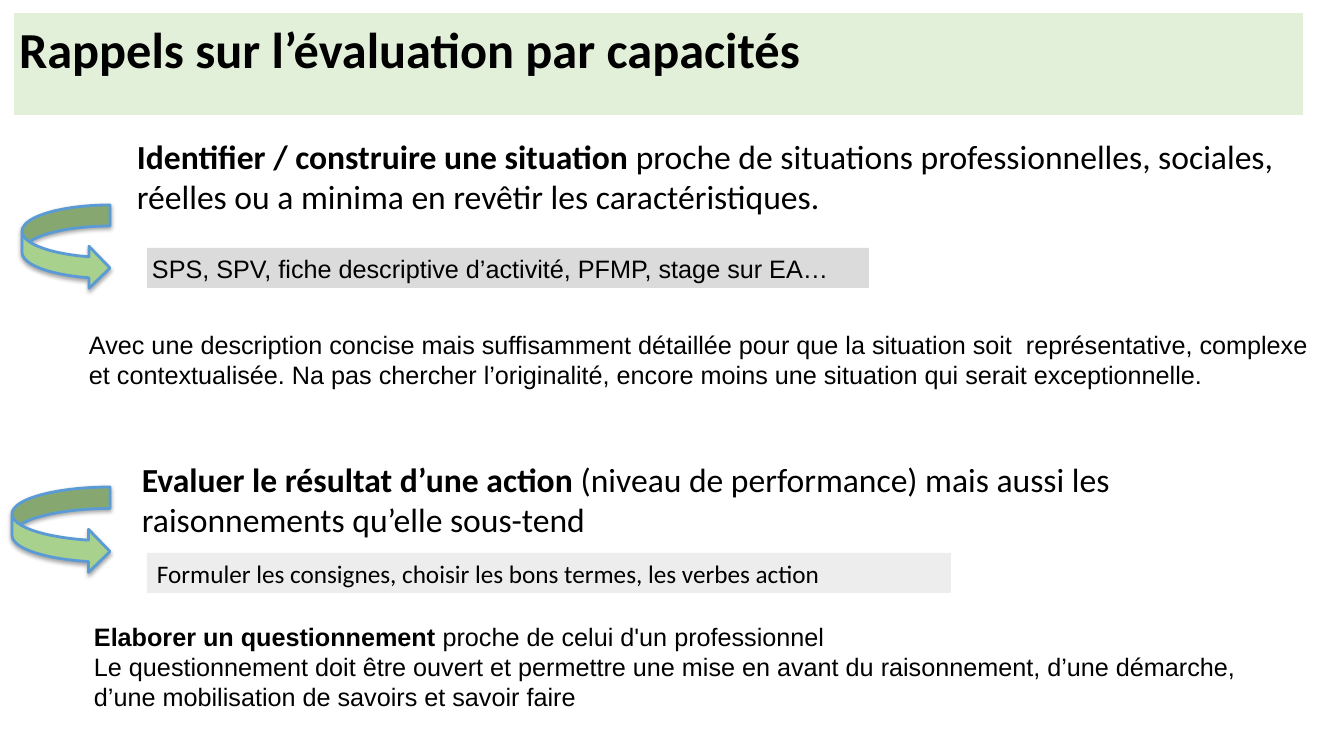
from lxml import etree
from pptx import Presentation
from pptx import util as u
from pptx.dml.color import RGBColor
from pptx.enum import shapes, text
from pptx.oxml import ns

PX = 914400 / 100.8

BLACK = RGBColor(0x00, 0x00, 0x00)
MINT = RGBColor(0xE2, 0xF0, 0xD9)
GREEN = RGBColor(0xA9, 0xD1, 0x8E)
BLUE = RGBColor(0x5B, 0x9B, 0xD5)
GREY = RGBColor(0xDB, 0xDB, 0xDB)
PALE = RGBColor(0xED, 0xED, 0xED)


def emu(*vals):
    return [u.Emu(round(v * PX)) for v in vals]


def write(shape, paras, size, font, inset):
    """Fill a shape; each paragraph is a list of (words, bold) pairs."""
    frame = shape.text_frame
    frame.word_wrap = True
    frame.auto_size = text.MSO_AUTO_SIZE.NONE
    frame.vertical_anchor = text.MSO_ANCHOR.TOP
    frame.margin_left, frame.margin_right = emu(inset, inset)
    frame.margin_top, frame.margin_bottom = emu(5, 5)
    for i, parts in enumerate(paras):
        para = frame.add_paragraph() if i else frame.paragraphs[0]
        para.alignment = text.PP_ALIGN.LEFT
        for words, bold in parts:
            run = para.add_run()
            run.text = words
            run.font.size = u.Pt(size)
            run.font.name = font
            run.font.bold = bold
            run.font.color.rgb = BLACK


def paint(shape, fill):
    shape.fill.solid()
    shape.fill.fore_color.rgb = fill


def title(slide, box, words):
    head = slide.shapes.title
    head.left, head.top, head.width, head.height = emu(*box)
    paint(head, MINT)
    write(head, [[(words, True)]], 36, "Calibri", 5)


def note(slide, box, paras, size, font, inset):
    write(slide.shapes.add_textbox(*emu(*box)), paras, size, font, inset)


def band(slide, box, words, fill, font, inset):
    bar = slide.shapes.add_shape(shapes.MSO_SHAPE.RECTANGLE, *emu(*box))
    bar.shadow.inherit = False
    paint(bar, fill)
    bar.line.fill.background()
    write(bar, [[(words, False)]], 18, font, inset)


def arrow(slide, box):
    bend = slide.shapes.add_shape(shapes.MSO_SHAPE.CURVED_RIGHT_ARROW, *emu(*box))
    paint(bend, GREEN)
    bend.line.color.rgb = BLUE
    bend.line.width = u.Pt(2)
    # Soft shadow straight below
    bend.shadow.inherit = False
    effects = bend.element.spPr.find(ns.qn("a:effectLst"))
    shade = etree.SubElement(effects, ns.qn("a:outerShdw"), blurRad=str(u.Pt(3)),
                             dist=str(u.Pt(1.8)), dir="5400000", rotWithShape="0")
    tone = etree.SubElement(shade, ns.qn("a:srgbClr"), val=str(BLACK))
    etree.SubElement(tone, ns.qn("a:alpha"), val="35000")


def situation(slide, box):
    x, y, w, h = box
    note(slide, (x + 118, y, 1170, 92), [[
        ("Identifier / construire une situation", True),
        (" proche de situations professionnelles, sociales, réelles ou a minima "
         "en revêtir les caractéristiques.", False)]], 24, "Calibri", 5)
    arrow(slide, (x + 8, y + 74, 88, 84))
    band(slide, (x + 133, y + 117, 722, 40),
         "SPS, SPV, fiche descriptive d’activité, PFMP, stage sur EA…",
         GREY, "Arial", 5)
    note(slide, (x + 70, y + 193, w - 70, 72), [[
        ("Avec une description concise mais suffisamment détaillée pour que la "
         "situation soit  représentative, complexe et contextualisée. Na pas "
         "chercher l’originalité, encore moins une situation qui serait "
         "exceptionnelle.", False)]], 18, "Arial", 5)


def result(slide, box):
    x, y, w, h = box
    note(slide, (x + 118, y, 1170, 92), [[
        ("Evaluer le résultat d’une action ", True),
        ("(niveau de performance) mais aussi les raisonnements qu’elle "
         "sous-tend", False)]], 24, "Calibri", 10)
    arrow(slide, (x - 2, y + 33, 98, 86))
    band(slide, (x + 133, y + 99, 804, 40),
         "Formuler les consignes, choisir les bons termes, les verbes action",
         PALE, "Calibri", 10)
    note(slide, (x + 70, y + 162, w - 93, 102), [
        [("Elaborer un questionnement ", True),
         ("proche de celui d'un professionnel", False)],
        [("Le questionnement doit être ouvert et permettre une mise en avant du "
          "raisonnement, d’une démarche, d’une mobilisation de savoirs et "
          "savoir faire", False)]], 18, "Arial", 10)


def main():
    deck = Presentation()
    deck.slide_width, deck.slide_height = emu(1344, 756)
    slide = deck.slides.add_slide(deck.slide_layouts[5])
    title(slide, (14, 13, 1289, 102), "Rappels sur l’évaluation par capacités")
    situation(slide, (14, 131, 1300, 265))
    result(slide, (14, 454, 1300, 264))
    deck.save("out.pptx")


if __name__ == "__main__":
    main()
